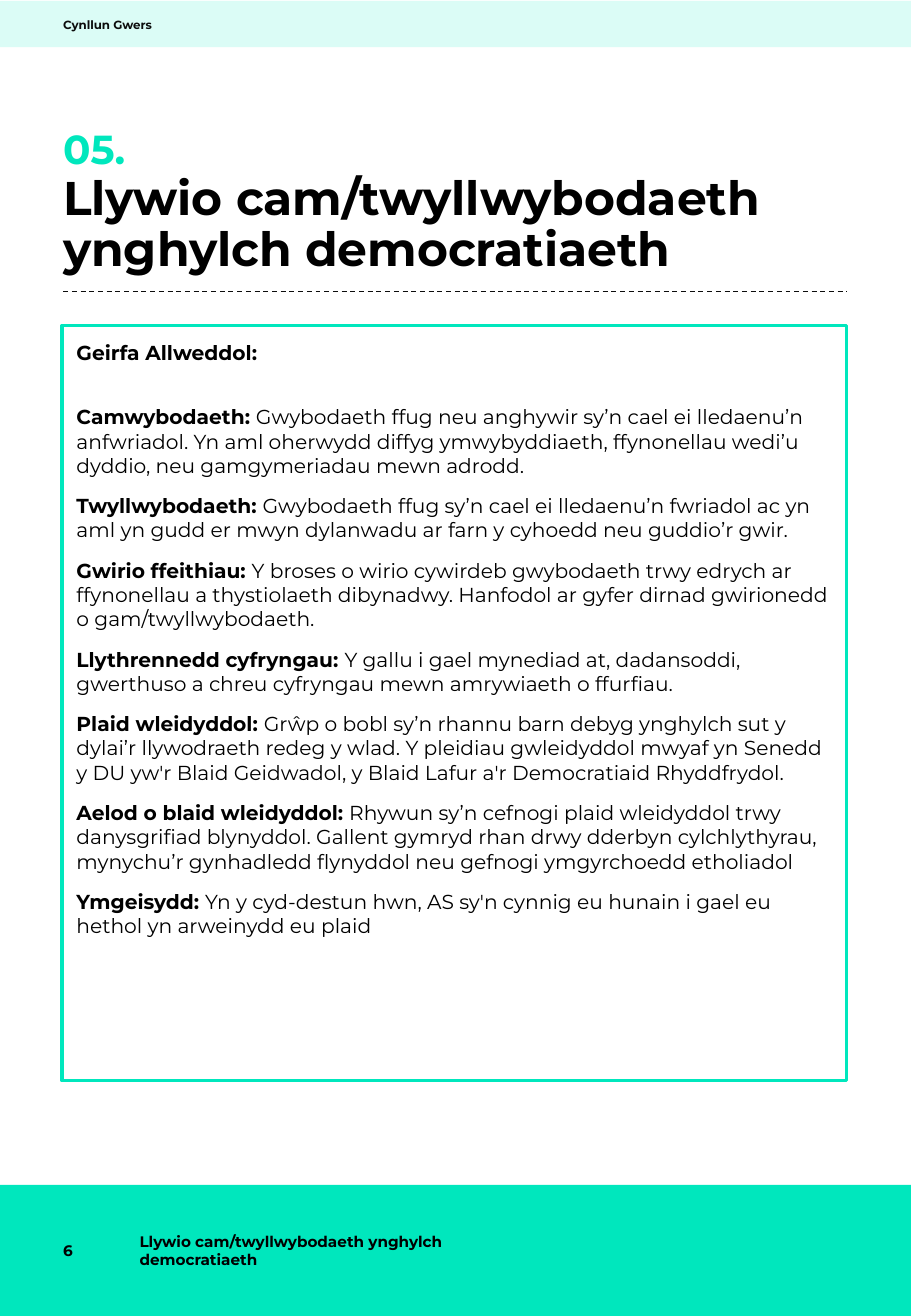
from lxml import etree
from pptx import Presentation
from pptx import util as u
from pptx.dml import color
from pptx.enum import dml, shapes, text
from pptx.oxml import ns

Cm, Pt = u.Cm, u.Pt

COLOURS = {"mint": "00E7BD", "pale": "DBFCF6", "black": "000000", "ink": "0C0C0C"}
FONT = "Montserrat"
PAGE_WIDTH, PAGE_HEIGHT = 19.05, 27.53
MARGIN, CONTENT_WIDTH = 1.32, 16.4
TITLE = "Llywio cam/twyllwybodaeth ynghylch democratiaeth"

GLOSSARY = [
    ("Camwybodaeth:", "Gwybodaeth ffug neu anghywir sy’n cael ei lledaenu’n anfwriadol. "
     "Yn aml oherwydd diffyg ymwybyddiaeth, ffynonellau wedi’u dyddio, neu gamgymeriadau "
     "mewn adrodd."),
    ("Twyllwybodaeth:", "Gwybodaeth ffug sy’n cael ei lledaenu’n fwriadol ac yn aml yn gudd "
     "er mwyn dylanwadu ar farn y cyhoedd neu guddio’r gwir."),
    ("Gwirio ffeithiau:", "Y broses o wirio cywirdeb gwybodaeth trwy edrych ar ffynonellau "
     "a thystiolaeth dibynadwy. Hanfodol ar gyfer dirnad gwirionedd o gam/twyllwybodaeth."),
    ("Llythrennedd cyfryngau:", "Y gallu i gael mynediad at, dadansoddi, gwerthuso a chreu "
     "cyfryngau mewn amrywiaeth o ffurfiau."),
    ("Plaid wleidyddol:", "Grŵp o bobl sy’n rhannu barn debyg ynghylch sut y dylai’r "
     "llywodraeth redeg y wlad. Y pleidiau gwleidyddol mwyaf yn Senedd y DU yw'r Blaid "
     "Geidwadol, y Blaid Lafur a'r Democratiaid Rhyddfrydol."),
    ("Aelod o blaid wleidyddol:", "Rhywun sy’n cefnogi plaid wleidyddol trwy danysgrifiad "
     "blynyddol. Gallent gymryd rhan drwy dderbyn cylchlythyrau, mynychu’r gynhadledd "
     "flynyddol neu gefnogi ymgyrchoedd etholiadol"),
    ("Ymgeisydd:", "Yn y cyd-destun hwn, AS sy'n cynnig eu hunain i gael eu hethol yn "
     "arweinydd eu plaid"),
]


def rgb(name):
    return color.RGBColor.from_string(COLOURS[name])


def add_span(para, words, size=12, bold=True, colour="black"):
    span = para.add_run()
    span.text = words
    span.font.name = FONT
    span.font.size = Pt(size)
    span.font.bold = bold
    span.font.color.rgb = rgb(colour)


def set_frame(shape, inset=0, anchor=text.MSO_ANCHOR.TOP):
    frame = shape.text_frame
    frame.word_wrap = True
    frame.vertical_anchor = anchor
    frame.margin_left = frame.margin_right = Cm(inset)
    frame.margin_top = frame.margin_bottom = Cm(inset)
    return frame


def add_label(page, box, words, middle=False, line_spacing=None, **span_format):
    anchor = text.MSO_ANCHOR.MIDDLE if middle else text.MSO_ANCHOR.TOP
    label = page.shapes.add_textbox(*map(Cm, box))
    para = set_frame(label, anchor=anchor).paragraphs[0]
    if line_spacing:
        para.line_spacing = line_spacing
    add_span(para, words, **span_format)


def add_rectangle(page, box, fill=None, line=None):
    rectangle = page.shapes.add_shape(shapes.MSO_SHAPE.RECTANGLE, *map(Cm, box))
    rectangle.shadow.inherit = False
    if fill:
        rectangle.fill.solid()
        rectangle.fill.fore_color.rgb = rgb(fill)
    else:
        rectangle.fill.background()
    if line:
        rectangle.line.color.rgb = rgb(line)
        rectangle.line.width = Pt(2)
    else:
        rectangle.line.fill.background()
    return rectangle


def add_header(page, box):
    left, top, width, height = box
    add_rectangle(page, box, fill="pale")
    add_label(page, (left + MARGIN, top + 0.15, 6.86, 0.71), "Cynllun Gwers",
              middle=True, size=7, colour="ink")


def add_heading(page, box):
    left, top, width, height = box
    add_label(page, (left, top, width, 0.94), "05.", size=24, colour="mint")
    add_label(page, (left, top + 1.07, width, 2.24), TITLE, line_spacing=0.9, size=28)

    # Dashed rule along the bottom
    bottom = Cm(top + height)
    rule = page.shapes.add_connector(shapes.MSO_CONNECTOR.STRAIGHT,
                                     Cm(left), bottom, Cm(left + width), bottom)
    rule.line.color.rgb = rgb("ink")
    rule.line.width = Pt(0.75)
    rule.line.dash_style = dml.MSO_LINE.DASH
    etree.SubElement(rule.element.spPr, ns.qn("a:effectLst"))


def add_glossary(page, box):
    frame = set_frame(add_rectangle(page, box, line="mint"), inset=0.3)
    heading = frame.paragraphs[0]
    heading.alignment = text.PP_ALIGN.LEFT
    add_span(heading, "Geirfa Allweddol:")
    for index, (term, meaning) in enumerate(GLOSSARY):
        para = frame.add_paragraph()
        para.alignment = text.PP_ALIGN.LEFT
        para.space_before = Pt(9.5 if index else 24)
        add_span(para, term + " ")
        add_span(para, meaning, bold=False)


def add_footer(page, box):
    left, top, width, height = box
    add_rectangle(page, box, fill="mint")
    add_label(page, (left + MARGIN, top, 1.1, height), "6", middle=True, size=9)
    add_label(page, (left + 2.92, top, 6.53, height), TITLE, middle=True, size=9)


def main():
    deck = Presentation()
    deck.slide_width, deck.slide_height = Cm(PAGE_WIDTH), Cm(PAGE_HEIGHT)
    page = deck.slides.add_slide(deck.slide_layouts[6])
    add_header(page, (0, 0.02, PAGE_WIDTH, 0.97))
    add_heading(page, (MARGIN, 2.59, CONTENT_WIDTH, 3.51))
    add_glossary(page, (1.3, 6.81, CONTENT_WIDTH, 15.8))
    add_footer(page, (0, 24.79, PAGE_WIDTH, 2.74))
    deck.save("out.pptx")


if __name__ == "__main__":
    main()
